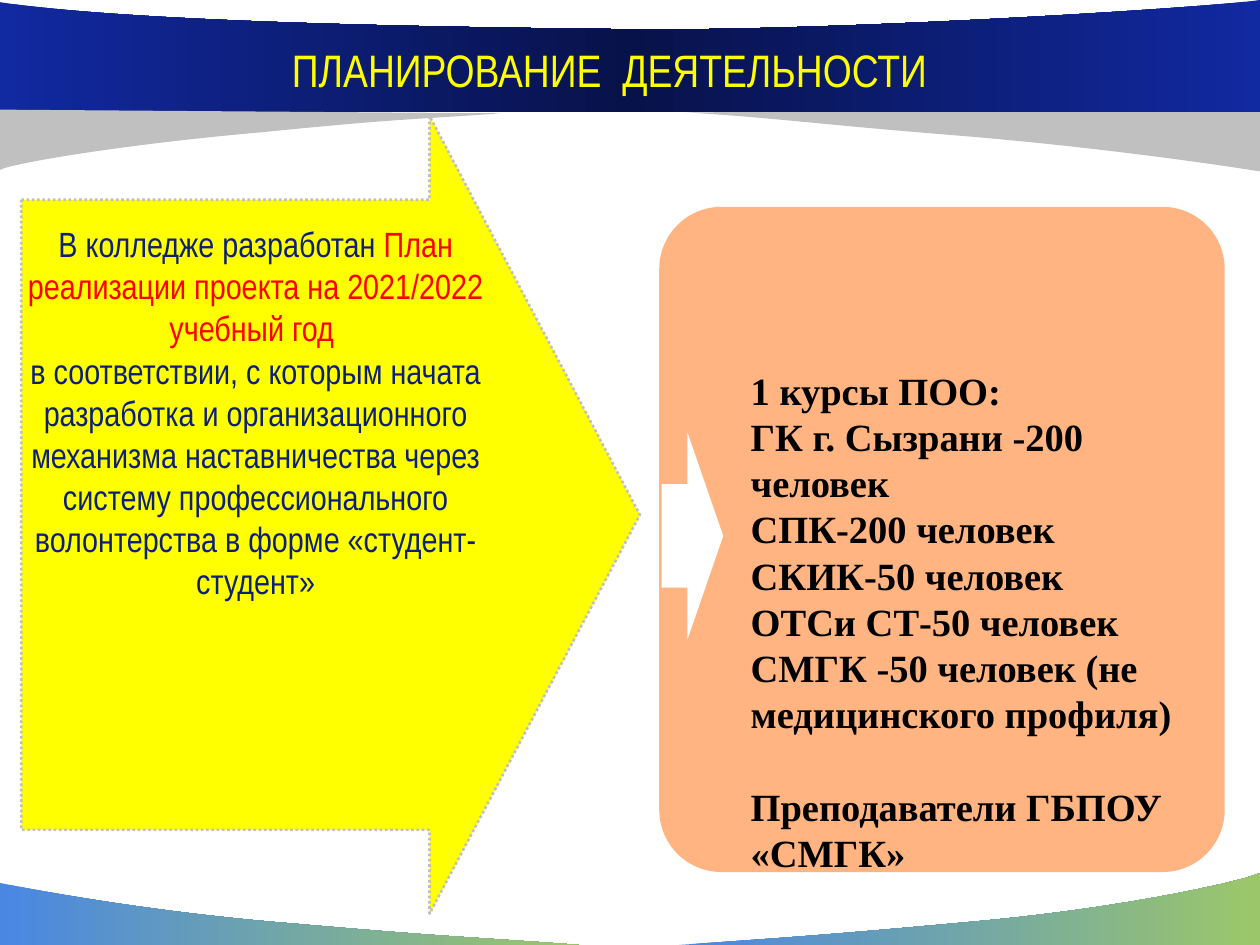
from copy import deepcopy

from lxml.etree import SubElement
from pptx import Presentation
from pptx.dml.color import RGBColor
from pptx.enum.dml import MSO_LINE
from pptx.enum.shapes import MSO_SHAPE
from pptx.enum.text import MSO_ANCHOR, MSO_AUTO_SIZE, PP_ALIGN
from pptx.oxml.ns import qn
from pptx.util import Cm, Pt

NARROW = "Arial Narrow"
SERIF = "Times New Roman"
GREY, NAVY, YELLOW, RED, WHITE = "C0C0C0", "0D1F79", "FFFF00", "FF0000", "FFFFFF"
BOTTOM_COLOURS = ["4987E3", "9CC769"]
BAND_COLOURS = ["1129A1", "08124A", "1129A1"]

WAVES = [
    ((0, 17.8, 11.68, 1.25), (100, 100),
     [((83, 88), (78, 88), (50, 65)), ((23, 45), (0, 0), (0, 0))],
     [(0, 100)], BOTTOM_COLOURS),
    ((13.69, 17.6, 11.71, 1.45), (0, 100),
     [((16, 91), (23, 88), (50, 68)), ((77, 49), (98, 9), (100, 0))],
     [(100, 100)], BOTTOM_COLOURS),
    ((13.82, 2.24, 11.58, 1.24), (0, 2),
     [((17, 12), (21, 20), (49, 41)), ((77, 63), (100, 98), (100, 98))],
     [(100, 0)], [GREY]),
    ((0, 0, 25.4, 2.26), (100, 0),
     [((96, 7), (65, 29), (49, 26)), ((32, 24), (10, 19), (0, 2))],
     [(0, 100), (100, 100)], BAND_COLOURS),
    ((0, 2.21, 10.11, 1.24), (100, 6),
     [((83, 16), (80, 14), (52, 37)), ((24, 57), (2, 88), (0, 98))],
     [(0, 0)], [GREY]),
]

PARTICIPANTS = [
    "1 курсы ПОО:",
    "ГК г. Сызрани -200 человек",
    "СПК-200 человек",
    "СКИК-50 человек",
    "ОТСи СТ-50 человек",
    "СМГК -50 человек (не медицинского профиля)",
    "Преподаватели ГБПОУ «СМГК»",
]


def colour(value):
    """Return the colour for a hex string."""
    return RGBColor.from_string(value)


def fill_shape(shape, colours):
    """Give a shape a solid or evenly spaced gradient fill, no line, no shadow."""
    shape.shadow.inherit = False
    shape.line.fill.background()
    if len(colours) == 1:
        shape.fill.solid()
        shape.fill.fore_color.rgb = colour(colours[0])
        return
    shape.fill.gradient()
    shape.fill.gradient_angle = 0
    stop_list = shape._element.spPr.find(qn("a:gradFill")).find(qn("a:gsLst"))
    while len(stop_list) < len(colours):
        stop_list.append(deepcopy(stop_list[0]))
    for index, stop in enumerate(shape.fill.gradient_stops):
        stop.position = index / (len(colours) - 1)
        stop.color.rgb = colour(colours[index])


def bend_segments(shape, curve_count):
    """Turn each leading triple of line segments into one cubic curve."""
    lines = list(shape._element.iter(qn("a:lnTo")))
    for index in range(curve_count):
        first, *others = lines[3 * index:3 * index + 3]
        first.tag = qn("a:cubicBezTo")
        for line in others:
            first.append(line[0])
            line.getparent().remove(line)


def add_wave(slide, box, start, curves, corners, colours):
    """Draw one curved band from percentages of the box."""
    left, top, width, height = box
    points = [start, *sum(curves, ()), *corners]
    outline = [(Cm(left + width * x / 100), Cm(top + height * y / 100))
               for x, y in points]
    builder = slide.shapes.build_freeform(*outline[0])
    builder.add_line_segments(outline[1:], close=True)
    wave = builder.convert_to_shape()
    bend_segments(wave, len(curves))
    fill_shape(wave, colours)


def add_block(shapes, kind, box, fill, adjustments):
    """Add a filled preset shape in the box."""
    shape = shapes.add_shape(kind, *map(Cm, box))
    for index, value in enumerate(adjustments):
        shape.adjustments[index] = value
    fill_shape(shape, [fill])
    return shape


def place_text(slide, shape, box):
    """Put a text shape in the box on top and return its text frame."""
    shape.left, shape.top, shape.width, shape.height = map(Cm, box)
    slide.shapes._spTree.append(shape._element)
    frame = shape.text_frame
    frame.word_wrap = True
    frame.auto_size = MSO_AUTO_SIZE.NONE
    frame.vertical_anchor = MSO_ANCHOR.TOP
    return frame


def write_paragraph(frame, index, runs, font, size, align, bold=False):
    """Write (text, colour) runs into the paragraph with this index."""
    paragraph = frame.add_paragraph() if index else frame.paragraphs[0]
    paragraph.alignment = align
    paragraph.line_spacing = Pt(size * 1.2)
    paragraph.space_before = Pt(0)
    for text, hex_colour in runs:
        run = paragraph.add_run()
        run.text = text
        run.font.name = font
        run.font.size = Pt(size)
        run.font.bold = bold
        run.font.color.rgb = colour(hex_colour)
    return paragraph


def add_title(slide, box):
    """Fill the title placeholder."""
    frame = place_text(slide, slide.shapes.title, box)
    write_paragraph(frame, 0, [("ПЛАНИРОВАНИЕ  ДЕЯТЕЛЬНОСТИ", YELLOW)],
                    NARROW, 26, PP_ALIGN.CENTER)


def add_plan(slide, box):
    """Draw the large arrow, the plan statement over it and the small arrow."""
    left, top, width, height = box
    arrow = add_block(slide.shapes, MSO_SHAPE.RIGHT_ARROW, box, YELLOW, [0.79, 0.34])
    arrow.line.color.rgb = colour(GREY)
    arrow.line.width = Pt(1.5)
    arrow.line.dash_style = MSO_LINE.ROUND_DOT
    text_box = slide.shapes.add_textbox(0, 0, 0, 0)
    frame = place_text(slide, text_box, (left - 0.43, top + 2.03, 10.31, 8.81))
    statements = [
        [("В колледже разработан ", NAVY),
         ("План реализации проекта на 2021/2022 учебный год ", RED)],
        [("в соответствии, с которым начата разработка и организационного "
          "механизма наставничества через систему профессионального "
          "волонтерства в форме «студент-студент»", NAVY)],
    ]
    for index, runs in enumerate(statements):
        write_paragraph(frame, index, runs, NARROW, 20, PP_ALIGN.CENTER)
    add_block(slide.shapes, MSO_SHAPE.RIGHT_ARROW,
              (left + 11.48, top + 14.78, 1.45, 0.61), WHITE, [0.5, 0.58])


def add_participants(slide, box):
    """Draw the translucent panel with its notch arrow and the participant list."""
    left, top, width, height = box
    group = slide.shapes.add_group_shape()
    panel = add_block(group.shapes, MSO_SHAPE.ROUNDED_RECTANGLE, box, "FF6600", [0.11])
    panel_colour = panel._element.spPr.find(qn("a:solidFill"))[0]
    SubElement(panel_colour, qn("a:alpha"), val="49000")
    add_block(group.shapes, MSO_SHAPE.RIGHT_ARROW,
              (left + 0.05, top + 4.55, 1.24, 4.17), WHITE, [0.5, 0.58])
    frame = place_text(slide, slide.placeholders[1],
                       (left + 1.59, top + 3.1, 9.12, 10.6))
    for index, text in enumerate(PARTICIPANTS):
        paragraph = write_paragraph(frame, index, [(text, "000000")],
                                    SERIF, 22, PP_ALIGN.LEFT, bold=True)
        properties = paragraph._p.get_or_add_pPr()
        properties.set("marL", "0")
        properties.set("indent", "0")
        SubElement(properties, qn("a:buNone"))
    paragraph.space_before = Pt(26.4)


def main():
    """Build the slide and save it."""
    presentation = Presentation()
    presentation.slide_width, presentation.slide_height = Cm(25.4), Cm(19.05)
    slide = presentation.slides.add_slide(presentation.slide_layouts[1])
    for wave in WAVES:
        add_wave(slide, *wave)
    add_plan(slide, (0.43, 2.34, 12.47, 16.08))
    add_participants(slide, (13.29, 4.17, 11.4, 13.41))
    add_title(slide, (1.5, 0.72, 21.59, 1.37))
    presentation.save("out.pptx")


if __name__ == "__main__":
    main()
